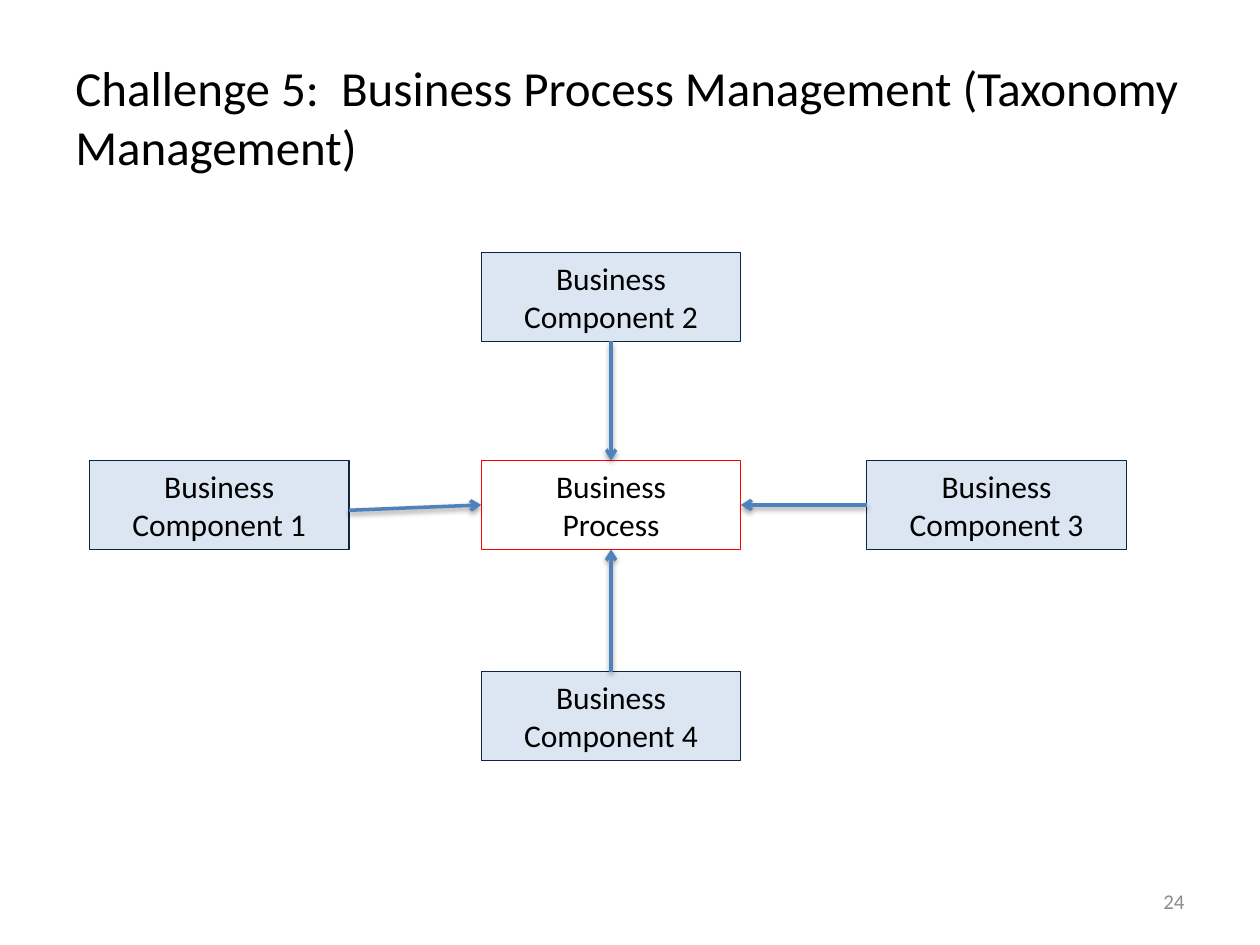
from dataclasses import dataclass
from lxml.etree import SubElement
from pptx import Presentation
from pptx.dml.color import RGBColor as Rgb
from pptx.enum.shapes import MSO_CONNECTOR as Link, MSO_SHAPE as Kind
from pptx.enum.text import MSO_ANCHOR as Anchor, MSO_AUTO_SIZE as Fit, PP_ALIGN as Align
from pptx.oxml.ns import qn
from pptx.util import Inches, Pt

COLS, ROWS = 20, 15
TOP, LEFT, BOTTOM, RIGHT = range(4)


@dataclass(frozen=True)
class Theme:
    font: str = "Calibri"
    ink: str = "000000"
    mute: str = "8C8C8C"
    pale: str = "DCE6F2"
    navy: str = "0F243E"
    red: str = "FF0000"
    blue: str = "4F81BD"
    head: int = 28
    body: int = 18
    small: int = 12


def write(frame, text, *, font, size, color, align=Align.LEFT, anchor=Anchor.TOP):
    frame.word_wrap = True
    frame.vertical_anchor = anchor
    frame.text = text
    for para in frame.paragraphs:
        para.alignment = align
        para.font.name = font
        para.font.size = Pt(size)
        para.font.color.rgb = Rgb.from_string(color)


class Board:
    """Draws styled elements on one slide, measured in grid columns and rows."""

    def __init__(self, deck, theme):
        self.theme = theme
        self.slide = deck.slides.add_slide(deck.slide_layouts[6])
        self.shapes = self.slide.shapes
        self.col = deck.slide_width / COLS
        self.row = deck.slide_height / ROWS

    def place(self, x, y):
        return round(x * self.col), round(y * self.row)

    def label(self, text, x, y, w, h, **style):
        area = self.shapes.add_textbox(*self.place(x, y), *self.place(w, h))
        write(area.text_frame, text, font=self.theme.font, anchor=Anchor.MIDDLE, **style)

    def box(self, text, x, y, line, fill=None, w=4.12, h=1.41):
        node = self.shapes.add_shape(Kind.RECTANGLE, *self.place(x, y), *self.place(w, h))
        node.shadow.inherit = False
        if fill:
            node.fill.solid()
            node.fill.fore_color.rgb = Rgb.from_string(fill)
        else:
            node.fill.background()
        node.line.color.rgb = Rgb.from_string(line)
        node.line.width = Pt(0.75)
        theme = self.theme
        write(node.text_frame, text, font=theme.font, size=theme.body,
              color=theme.ink, align=Align.CENTER)
        node.text_frame.auto_size = Fit.SHAPE_TO_FIT_TEXT
        return node

    def arrow(self, start, end, side, source=None):
        wire = self.shapes.add_connector(Link.STRAIGHT, *self.place(*start), 0, 0)
        if source:
            wire.begin_connect(source, (side + 2) % 4)
        wire.end_connect(end, side)
        wire.line.color.rgb = Rgb.from_string(self.theme.blue)
        wire.line.width = Pt(2)
        props = wire._element.spPr
        SubElement(props.find(qn("a:ln")), qn("a:tailEnd"), type="arrow")
        glow = SubElement(props, qn("a:effectLst"))
        shade = SubElement(glow, qn("a:outerShdw"), blurRad=str(Pt(3.1)),
                           dist=str(Pt(1.6)), dir="5400000", rotWithShape="0")
        tint = SubElement(shade, qn("a:srgbClr"), val=self.theme.ink)
        SubElement(tint, qn("a:alpha"), val="38000")


def main():
    deck = Presentation()
    deck.slide_width, deck.slide_height = Inches(10), Inches(7.5)
    theme = Theme()
    board = Board(deck, theme)
    board.label("Challenge 5:  Business Process Management (Taxonomy Management)",
                1, 0.6, 18, 2.5, size=theme.head, color=theme.ink)

    mid, level = 7.64, 7.31
    core = board.box("Business\nProcess", mid, level, theme.red)
    spots = {4: (mid, 10.66), 1: (1.42, level), 3: (13.76, level), 2: (mid, 4.01)}
    parts = {num: board.box(f"Business\nComponent {num}", *spot, theme.navy, theme.pale)
             for num, spot in spots.items()}

    board.arrow(spots[2], core, TOP, parts[2])
    board.arrow((5.54, 8.1), core, LEFT)
    board.arrow(spots[3], core, RIGHT, parts[3])
    board.arrow(spots[4], core, BOTTOM, parts[4])

    board.label("24", 14.34, 13.9, 4.66, 0.8, size=theme.small,
                color=theme.mute, align=Align.RIGHT)
    deck.save("out.pptx")


if __name__ == "__main__":
    main()
